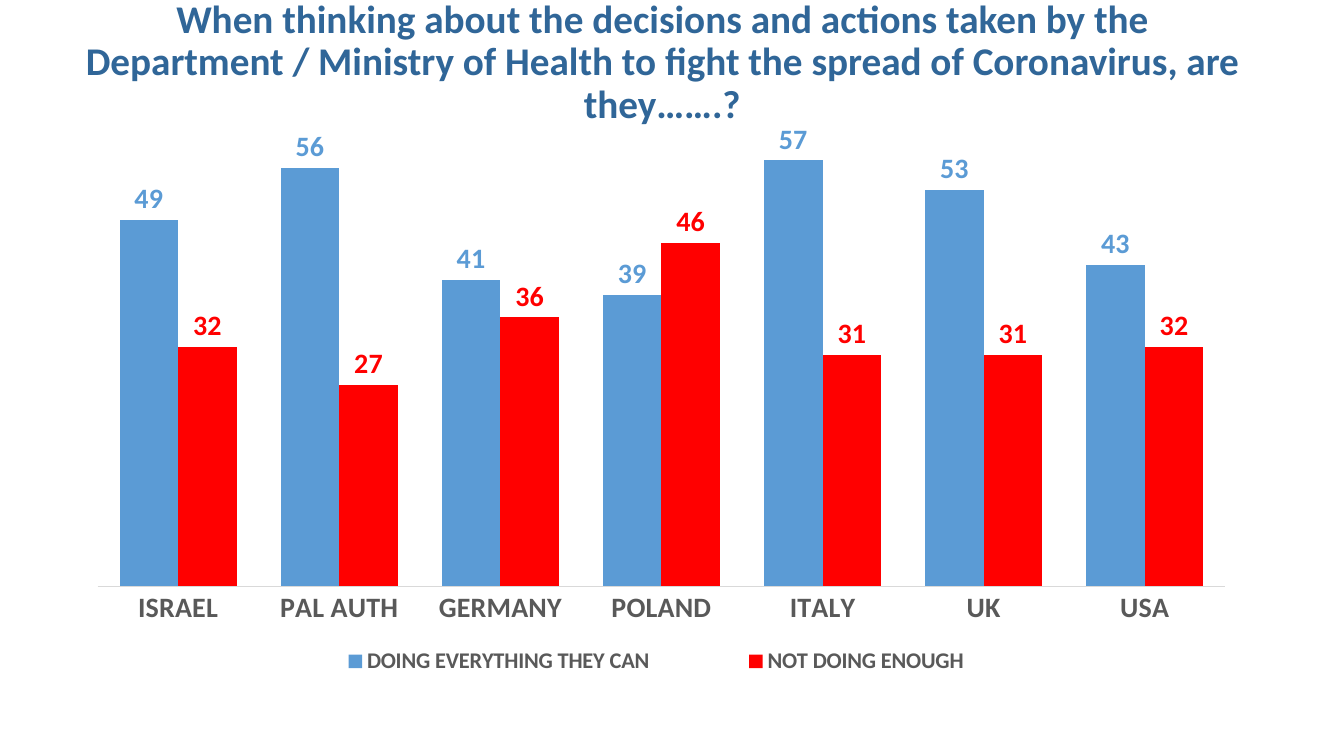
from dataclasses import dataclass

import pptx
import pptx.chart.data
import pptx.dml.color
import pptx.enum.chart
import pptx.enum.text
import pptx.oxml
import pptx.oxml.ns
import pptx.util
from pptx.util import Cm, Pt

QUESTION = ("When thinking about the decisions and actions taken by the Department / "
            "Ministry of Health to fight the spread of Coronavirus, are they…….?")
COUNTRIES = ["ISRAEL", "PAL AUTH", "GERMANY", "POLAND", "ITALY", "UK", "USA"]
ANSWERS = {
    "DOING EVERYTHING THEY CAN": [49, 56, 41, 39, 57, 53, 43],
    "NOT DOING ENOUGH": [32, 27, 36, 46, 31, 31, 32],
}


@dataclass(frozen=True)
class Theme:
    font: str = "Calibri"
    title: str = "306698"
    text: str = "595959"
    line: str = "D9D9D9"
    series: tuple = ("5B9BD5", "FF0000")
    title_size: int = 28
    label_size: int = 20
    legend_size: int = 16


def rgb(value):
    return pptx.dml.color.RGBColor.from_string(value)


def format_font(font, *, name, size, color, bold=True):
    font.name, font.size, font.bold = name, Pt(size), bold
    font.color.rgb = rgb(color)


def write(tf, text, *, align, spacing, **style):
    p = tf.paragraphs[0]
    p.alignment, p.line_spacing = align, spacing
    r = p.add_run()
    r.text = text
    format_font(r.font, **style)


def manual_layout(x, y, w, h, inner=False):
    """Return a c:layout element placed in fractions of the chart area."""
    target = '<c:layoutTarget val="inner"/>' if inner else ""
    return pptx.oxml.parse_xml(
        f'<c:layout {pptx.oxml.ns.nsdecls("c")}><c:manualLayout>{target}'
        '<c:xMode val="edge"/><c:yMode val="edge"/>'
        f'<c:x val="{x}"/><c:y val="{y}"/><c:w val="{w}"/><c:h val="{h}"/>'
        '</c:manualLayout></c:layout>')


def set_layout(parent, layout, after=None):
    """Replace the layout of parent, right behind the child tagged after."""
    for old in parent.findall(pptx.oxml.ns.qn("c:layout")):
        parent.remove(old)
    if after is None:
        parent.insert(0, layout)
    else:
        parent.find(pptx.oxml.ns.qn(after)).addnext(layout)


class SlideBuilder:
    def __init__(self, prs, theme):
        self.theme = theme
        self.s = prs.slides.add_slide(prs.slide_layouts.get_by_name("Title Only"))

    def style(self, size, color):
        return {"name": self.theme.font, "size": size, "color": color}

    def title(self, text, left, top, width, height):
        sp = self.s.shapes.title
        sp.left, sp.top, sp.width, sp.height = left, top, width, height
        tf = sp.text_frame
        tf.word_wrap = True
        tf.auto_size = pptx.enum.text.MSO_AUTO_SIZE.NONE
        tf.vertical_anchor = pptx.enum.text.MSO_ANCHOR.MIDDLE
        write(tf, text, align=pptx.enum.text.PP_ALIGN.CENTER, spacing=0.9,
              **self.style(self.theme.title_size, self.theme.title))

    def column_chart(self, categories, answers, left, top, width, height):
        data = pptx.chart.data.CategoryChartData()
        data.categories = categories
        for name, values in answers.items():
            data.add_series(name, values)
        chart = self.s.shapes.add_chart(
            pptx.enum.chart.XL_CHART_TYPE.COLUMN_CLUSTERED,
            left, top, width, height, data).chart
        chart.has_title = False
        format_font(chart.font, bold=False, **self.style(10, "000000"))

        plot = chart.plots[0]
        plot.gap_width, plot.overlap, plot.vary_by_categories = 75, 0, False
        for series, color in zip(plot.series, self.theme.series):
            self.color_series(series, color)
        self.axes(chart)
        self.legend(chart)
        set_layout(chart._chartSpace.chart.plotArea,
                   manual_layout(0.013, 0.052, 0.973, 0.778, inner=True))

    def color_series(self, series, color):
        series.format.fill.solid()
        series.format.fill.fore_color.rgb = rgb(color)
        labels = series.data_labels
        labels.show_value = True
        labels.position = pptx.enum.chart.XL_LABEL_POSITION.OUTSIDE_END
        format_font(labels.font, **self.style(self.theme.label_size, color))

    def axes(self, chart):
        axis = chart.category_axis
        axis.major_tick_mark = pptx.enum.chart.XL_TICK_MARK.NONE
        axis.format.line.color.rgb = rgb(self.theme.line)
        axis.format.line.width = Pt(0.75)
        format_font(axis.tick_labels.font,
                    **self.style(self.theme.label_size, self.theme.text))
        values = chart.value_axis
        values.minimum_scale, values.maximum_scale = 0, 60
        values.has_major_gridlines = False
        values.visible = False

    def legend(self, chart):
        chart.has_legend = True
        legend = chart.legend
        legend.position = pptx.enum.chart.XL_LEGEND_POSITION.BOTTOM
        legend.include_in_layout = False
        format_font(legend.font, **self.style(self.theme.legend_size, self.theme.text))
        set_layout(legend._element, manual_layout(0.15, 0.92, 0.69, 0.08),
                   after="c:legendPos")


def main():
    prs = pptx.Presentation()
    prs.slide_width, prs.slide_height = Cm(33.87), Cm(19.05)
    slide = SlideBuilder(prs, Theme())
    slide.title(QUESTION, Cm(1.83), Cm(0.46), Cm(29.72), Cm(2.26))
    slide.column_chart(COUNTRIES, ANSWERS, Cm(2.08), Cm(2.72), Cm(29.21), Cm(14.53))
    prs.save("out.pptx")


if __name__ == "__main__":
    main()
